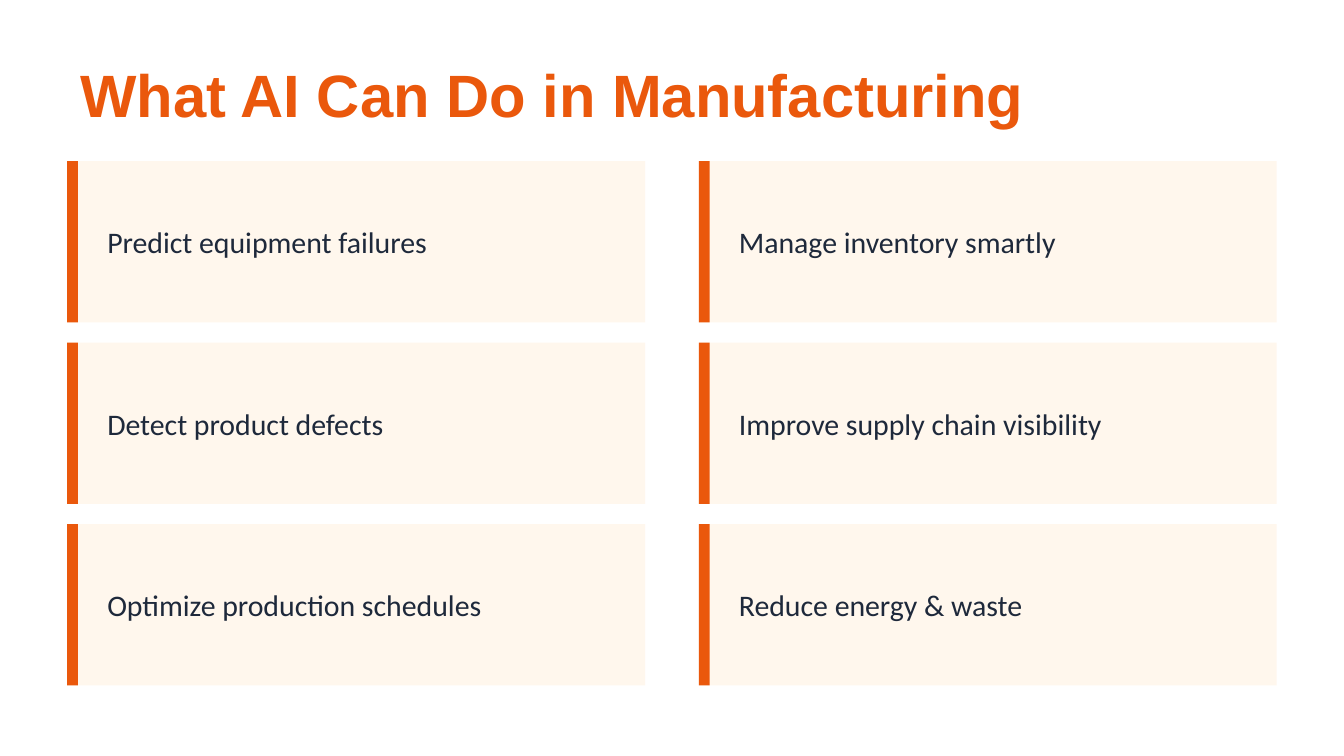
from pptx import Presentation
from pptx.dml.color import RGBColor as Rgb
from pptx.enum import shapes, text
from pptx.util import Pt

TITLE = "What AI Can Do in Manufacturing"
COLS = [
    ["Predict equipment failures", "Detect product defects", "Optimize production schedules"],
    ["Manage inventory smartly", "Improve supply chain visibility", "Reduce energy & waste"],
]
THEME = {
    "page": "FFFFFF",
    "card": "FFF7ED",
    "bar": "EA580C",
    "title": {"font": "Arial", "size": 32, "color": "EA580C", "bold": True},
    "label": {"font": "Calibri", "size": 16, "color": "1E293B", "bold": False},
}
LEFT, TOP = 36, 86.4
WIDE, HIGH = 309.6, 86.4
STEP_X, STEP_Y = 338.4, 97.2
BAR = 5.76
PAD_X, PAD_Y = 14.4, 10.8


def add_rect(slide, x, y, w, h, color):
    rect = slide.shapes.add_shape(shapes.MSO_SHAPE.RECTANGLE, Pt(x), Pt(y), Pt(w), Pt(h))
    rect.shadow.inherit = False
    rect.fill.solid()
    rect.fill.fore_color.rgb = Rgb.from_string(color)
    rect.line.fill.background()


def add_text(slide, x, y, w, h, words, style):
    frame = slide.shapes.add_textbox(Pt(x), Pt(y), Pt(w), Pt(h)).text_frame
    frame.word_wrap = True
    frame.vertical_anchor = text.MSO_ANCHOR.MIDDLE
    para = frame.paragraphs[0]
    para.text = words
    para.font.name = style["font"]
    para.font.size = Pt(style["size"])
    para.font.bold = style["bold"]
    para.font.color.rgb = Rgb.from_string(style["color"])


def add_card(slide, x, y, words):
    add_rect(slide, x, y, WIDE, HIGH, THEME["card"])
    add_rect(slide, x, y, BAR, HIGH, THEME["bar"])
    add_text(slide, x + PAD_X, y + PAD_Y, WIDE - 2 * PAD_X, HIGH - 2 * PAD_Y,
             words, THEME["label"])


def main():
    deck = Presentation()
    deck.slide_width, deck.slide_height = Pt(720), Pt(405)
    slide = deck.slides.add_slide(deck.slide_layouts[6])
    slide.background.fill.solid()
    slide.background.fill.fore_color.rgb = Rgb.from_string(THEME["page"])
    add_text(slide, LEFT, 28.8, 648, 43.2, TITLE, THEME["title"])
    for col, labels in enumerate(COLS):
        for row, label in enumerate(labels):
            add_card(slide, LEFT + col * STEP_X, TOP + row * STEP_Y, label)
    deck.save("out.pptx")


if __name__ == "__main__":
    main()
